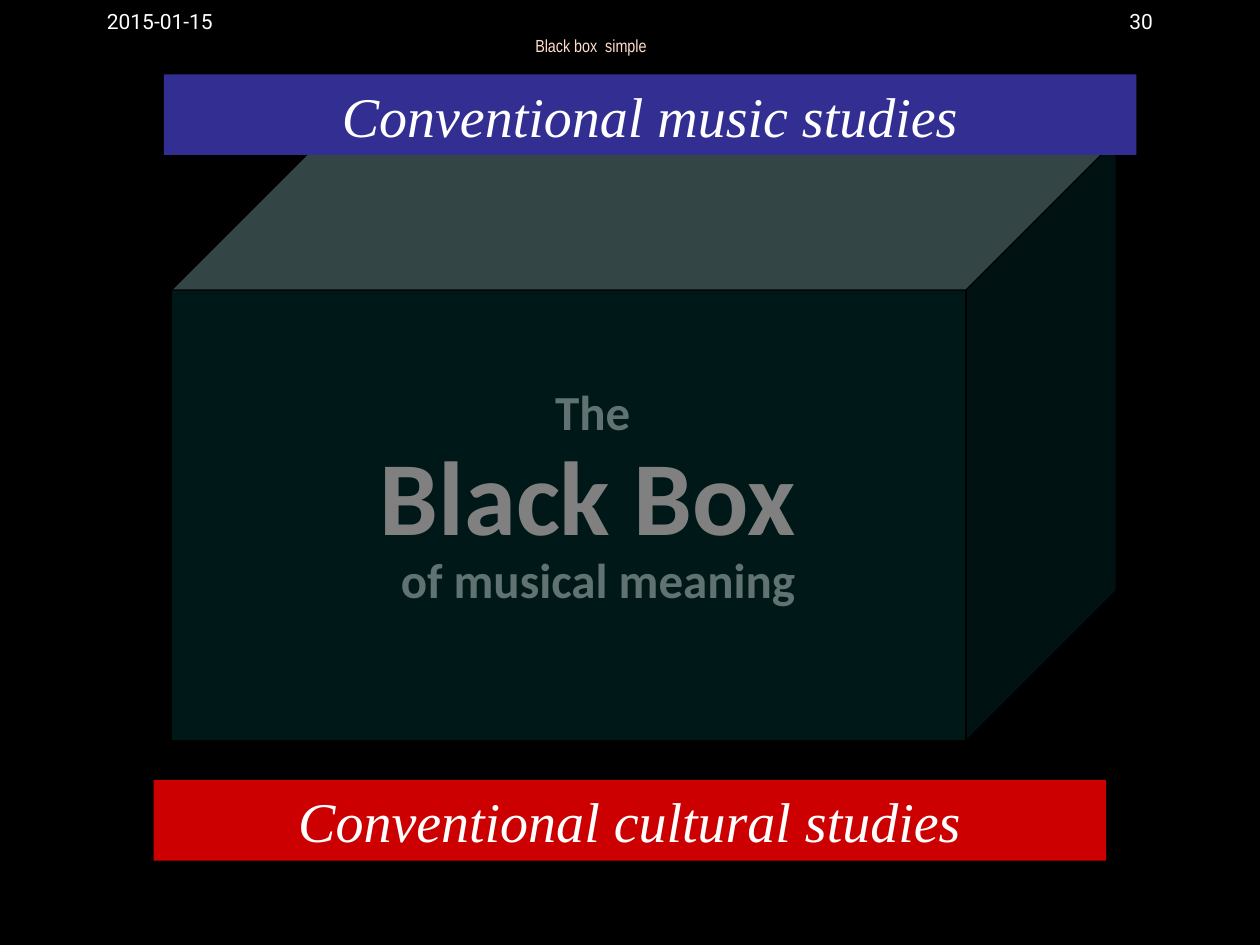
from pptx import Presentation
from pptx.dml.color import RGBColor
from pptx.enum import shapes, text
from pptx.util import Inches, Pt

# Theme: each style is font, size, colour, bold, italic
THEME = {
    "back": "000000", "edge": "000000", "box": "001817",
    "music": "332E92", "culture": "CC0000",
    "title": ("Arial Narrow", 10, "FFDFCC", False, False),
    "meta": ("Roboto", 12, "FFFFFF", False, False),
    "big": ("Calibri", 60, "808080", True, False),
    "small": ("Calibri", 28, "607272", True, False),
    "bar": ("Times New Roman", 32, "FFFFFF", False, True),
}
LEFT, MID, RIGHT = text.PP_ALIGN.LEFT, text.PP_ALIGN.CENTER, text.PP_ALIGN.RIGHT

# Content: boxes are left, top, width, height in inches
TITLE = ("Black box  simple", (3.75, 0.23, 1.88, 0.43))
CUBE = (1.36, 1.11, 7.5, 4.77)
LABELS = [
    ("Black Box", "big", MID, (1.93, 3.37, 5.47, 1.11)),
    ("The", "small", MID, (4.04, 2.98, 1.33, 0.57)),
    ("of musical meaning", "small", MID, (2.09, 4.31, 5.31, 0.57)),
    ("2015-01-15", "meta", LEFT, (0.75, 0.02, 2.08, 0.5)),
    ("30", "meta", RIGHT, (7.17, 0.02, 2.08, 0.5)),
]
BARS = [
    ("Conventional music studies", "music", (1.3, 0.59, 7.72, 0.64)),
    ("Conventional cultural studies", "culture", (1.22, 6.19, 7.56, 0.64)),
]


def tint(key):
    return RGBColor.from_string(THEME[key])


def place(box):
    return [Inches(n) for n in box]


def write(shape, words, style, align, anchor=text.MSO_ANCHOR.TOP):
    frame = shape.text_frame
    frame.text = words
    frame.word_wrap = True
    frame.auto_size = text.MSO_AUTO_SIZE.NONE
    frame.vertical_anchor = anchor
    para = frame.paragraphs[0]
    para.alignment = align
    font = para.font
    name, size, color, font.bold, font.italic = THEME[style]
    font.name, font.size = name, Pt(size)
    font.color.rgb = RGBColor.from_string(color)


def solid(slide, kind, box, fill):
    shape = slide.shapes.add_shape(kind, *place(box))
    shape.shadow.inherit = False
    shape.fill.solid()
    shape.fill.fore_color.rgb = tint(fill)
    shape.line.fill.background()
    return shape


def main():
    deck = Presentation()
    deck.slide_width, deck.slide_height = Inches(10), Inches(7.5)
    slide = deck.slides.add_slide(deck.slide_layouts[5])
    slide.background.fill.solid()
    slide.background.fill.fore_color.rgb = tint("back")

    # Title
    words, box = TITLE
    title = slide.shapes.title
    title.left, title.top, title.width, title.height = place(box)
    write(title, words, "title", MID)

    # Black box
    cube = solid(slide, shapes.MSO_SHAPE.CUBE, CUBE, "box")
    cube.line.color.rgb = tint("edge")
    cube.line.width = Pt(0.75)

    # Labels, date and page number
    for words, style, align, box in LABELS:
        write(slide.shapes.add_textbox(*place(box)), words, style, align)

    # Bars above and below the box
    for words, fill, box in BARS:
        bar = solid(slide, shapes.MSO_SHAPE.RECTANGLE, box, fill)
        write(bar, words, "bar", MID, text.MSO_ANCHOR.MIDDLE)

    deck.save("out.pptx")


if __name__ == "__main__":
    main()
